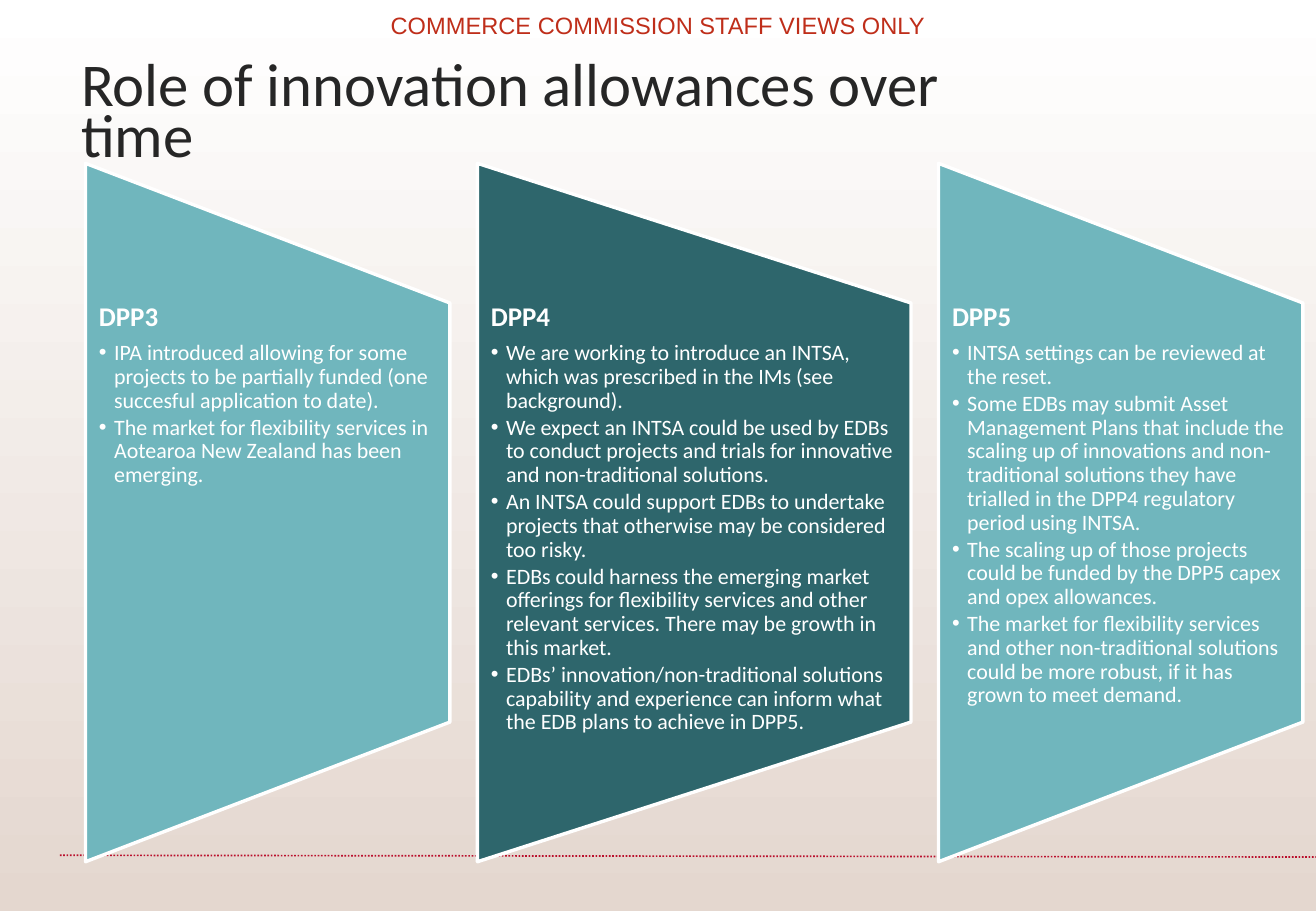
import pptx
import pptx.util
import pptx.dml.color
import pptx.enum.dml
import pptx.enum.shapes
import pptx.enum.text
import pptx.oxml
import pptx.oxml.ns

Pt = pptx.util.Pt

BANNER = "COMMERCE COMMISSION STAFF VIEWS ONLY"
TITLE = "Role of innovation allowances over time"
PANELS = [
    ("DPP3", 216, "70B6BD", [
        "IPA introduced allowing for some projects to be partially funded (one succesful application to date).",
        "The market for flexibility services in Aotearoa New Zealand has been emerging.",
    ]),
    ("DPP4", 257, "2E666C", [
        "We are working to introduce an INTSA, which was prescribed in the IMs (see background).",
        "We expect an INTSA could be used by EDBs to conduct projects and trials for innovative and non-traditional solutions.",
        "An INTSA could support EDBs to undertake projects that otherwise may be considered too risky.",
        "EDBs could harness the emerging market offerings for flexibility services and other relevant services. There may be growth in this market.",
        "EDBs’ innovation/non-traditional solutions capability and experience can inform what the EDB plans to achieve in DPP5.",
    ]),
    ("DPP5", 216, "70B6BD", [
        "INTSA settings can be reviewed at the reset.",
        "Some EDBs may submit Asset Management Plans that include the scaling up of innovations and non-traditional solutions they have trialled in the DPP4 regulatory period using INTSA.",
        "The scaling up of those projects could be funded by the DPP5 capex and opex allowances.",
        "The market for flexibility services and other non-traditional solutions could be more robust, if it has grown to meet demand.",
    ]),
]
PANEL_LEFT, PANEL_GAP = 50.7, 16.3
PANEL_HEIGHT, PANEL_MIDDLE = 414, 303.8
TEXT_HEIGHT = 248.4
BULLET_INDENT = 9


def rgb(color):
    return pptx.dml.color.RGBColor.from_string(color)


def add_text(slide, x, y, w, h):
    tf = slide.shapes.add_textbox(Pt(x), Pt(y), Pt(w), Pt(h)).text_frame
    tf.word_wrap = True
    return tf


def write(p, text, size, color, font="Calibri", bold=False):
    p.text = text
    r = p.runs[0]
    r.font.name, r.font.size, r.font.bold = font, Pt(size), bold
    r.font.color.rgb = rgb(color)


def add_bullet(p):
    pPr = p._p.get_or_add_pPr()
    pPr.set("marL", str(Pt(BULLET_INDENT)))
    pPr.set("indent", str(-Pt(BULLET_INDENT)))
    ns = pptx.oxml.ns.nsdecls("a")
    pPr.append(pptx.oxml.parse_xml(f'<a:buFont {ns} typeface="Arial"/>'))
    pPr.append(pptx.oxml.parse_xml(f'<a:buChar {ns} char="•"/>'))


def add_panel(slide, x, w, color, heading, bullets):
    sp = slide.shapes.add_shape(
        pptx.enum.shapes.MSO_SHAPE.FLOWCHART_MANUAL_OPERATION,
        Pt(x + (w - PANEL_HEIGHT) / 2), Pt(PANEL_MIDDLE - w / 2),
        Pt(PANEL_HEIGHT), Pt(w))
    sp.rotation = 270
    sp.shadow.inherit = False
    sp.fill.solid()
    sp.fill.fore_color.rgb = rgb(color)
    sp.line.color.rgb = rgb("FFFFFF")
    sp.line.width = Pt(2)

    tf = add_text(slide, x, PANEL_MIDDLE - TEXT_HEIGHT / 2, w, TEXT_HEIGHT)
    tf.margin_left = tf.margin_right = Pt(8)
    tf.margin_top = tf.margin_bottom = 0
    p = tf.paragraphs[0]
    write(p, heading, 16, "FFFFFF", bold=True)
    p.line_spacing, p.space_after = 0.9, Pt(5.6)
    for bullet in bullets:
        p = tf.add_paragraph()
        add_bullet(p)
        write(p, bullet, 13, "FFFFFF")
        p.line_spacing, p.space_after = 0.9, Pt(2)


def main():
    prs = pptx.Presentation()
    prs.slide_width, prs.slide_height = Pt(780), Pt(540)
    slide = prs.slides.add_slide(prs.slide_layouts[6])

    fill = slide.background.fill
    fill.gradient()
    fill.gradient_angle = 270
    for stop, color, position in zip(fill.gradient_stops, ("FFFFFF", "E4D7CF"), (0, 1)):
        stop.color.rgb = rgb(color)
        stop.position = position

    rule = slide.shapes.add_connector(
        pptx.enum.shapes.MSO_CONNECTOR.STRAIGHT, Pt(35.5), Pt(507), Pt(780), Pt(508))
    rule.line.color.rgb = rgb("BA0F2C")
    rule.line.width = Pt(1)
    rule.line.dash_style = pptx.enum.dml.MSO_LINE.ROUND_DOT
    rule._element.spPr.append(
        pptx.oxml.parse_xml(f'<a:effectLst {pptx.oxml.ns.nsdecls("a")}/>'))

    p = add_text(slide, 41, 35.3, 561.6, 83.5).paragraphs[0]
    write(p, TITLE, 36, "262626")
    p.line_spacing = 0.7

    x = PANEL_LEFT
    for heading, w, color, bullets in PANELS:
        add_panel(slide, x, w, color, heading, bullets)
        x += w + PANEL_GAP

    p = add_text(slide, 166, 2.9, 448, 24.5).paragraphs[0]
    write(p, BANNER, 14, "BF2E1A", font="Arial")
    p.alignment = pptx.enum.text.PP_ALIGN.CENTER

    prs.save("out.pptx")


if __name__ == "__main__":
    main()
